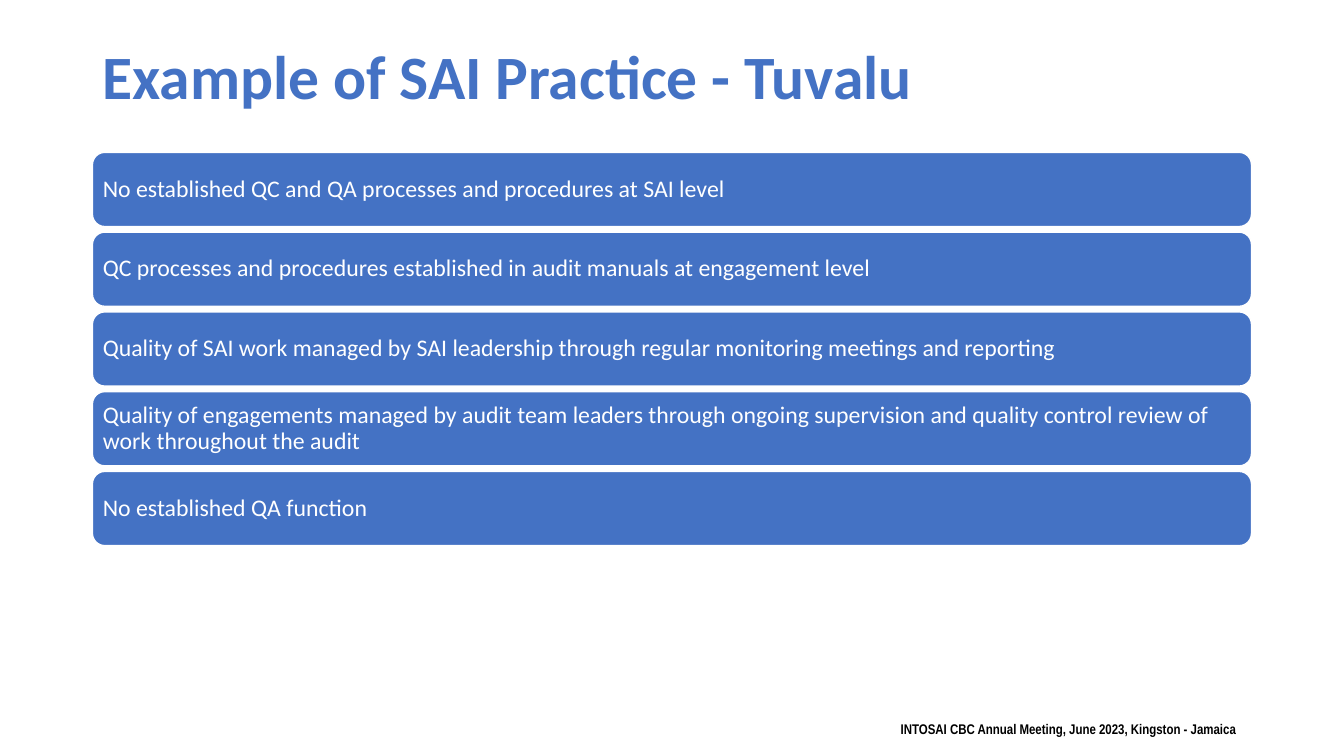
from dataclasses import dataclass

from pptx import Presentation
from pptx.dml.color import RGBColor
from pptx.enum.shapes import MSO_SHAPE
from pptx.enum.text import MSO_ANCHOR, MSO_AUTO_SIZE, PP_ALIGN
from pptx.util import Cm, Pt

ROUNDED = MSO_SHAPE.ROUNDED_RECTANGLE
MIDDLE, TOP = MSO_ANCHOR.MIDDLE, MSO_ANCHOR.TOP
LEFT = PP_ALIGN.LEFT
NO_AUTOFIT = MSO_AUTO_SIZE.NONE


@dataclass(frozen=True)
class Theme:
    blue: RGBColor = RGBColor(0x44, 0x72, 0xC4)
    white: RGBColor = RGBColor(0xFF, 0xFF, 0xFF)
    black: RGBColor = RGBColor(0, 0, 0)
    main_font: str = "Calibri"
    footer_font: str = "Arial Narrow"
    title_size: int = 44
    finding_size: int = 17
    footer_size: int = 10


THEME = Theme()


def write(shape, text, *, size, color, font=THEME.main_font, bold=False,
          anchor=MIDDLE, line_spacing=0.9, inset_x=0.25, inset_y=0.13):
    frame = shape.text_frame
    frame.text = text
    frame.word_wrap = True
    frame.auto_size = NO_AUTOFIT
    frame.vertical_anchor = anchor
    frame.margin_left = frame.margin_right = Cm(inset_x)
    frame.margin_top = frame.margin_bottom = Cm(inset_y)
    paragraph = frame.paragraphs[0]
    paragraph.alignment = LEFT
    paragraph.line_spacing = line_spacing
    run_font = paragraph.runs[0].font
    run_font.name = font
    run_font.size = Pt(size)
    run_font.bold = bold
    run_font.color.rgb = color


FINDINGS = [
    "No established QC and QA processes and procedures at SAI level",
    "QC processes and procedures established in audit manuals at engagement level",
    "Quality of SAI work managed by SAI leadership through regular monitoring "
    "meetings and reporting",
    "Quality of engagements managed by audit team leaders through ongoing "
    "supervision and quality control review of work throughout the audit",
    "No established QA function",
]
CONTENT_LEFT, CONTENT_WIDTH = Cm(2.33), Cm(29.21)
FINDING_TOP, FINDING_HEIGHT, FINDING_PITCH = 3.84, 1.87, 2.01

prs = Presentation()
prs.slide_width, prs.slide_height = Cm(33.87), Cm(19.05)
slide = prs.slides.add_slide(prs.slide_layouts[5])

title = slide.shapes.title
title.left, title.top = CONTENT_LEFT, Cm(1.02)
title.width, title.height = CONTENT_WIDTH, Cm(1.96)
write(title, "Example of SAI Practice - Tuvalu", size=THEME.title_size,
      color=THEME.blue, bold=True)

for row, finding in enumerate(FINDINGS):
    card = slide.shapes.add_shape(
        ROUNDED, CONTENT_LEFT, Cm(FINDING_TOP + row * FINDING_PITCH),
        CONTENT_WIDTH, Cm(FINDING_HEIGHT))
    card.shadow.inherit = False
    card.fill.solid()
    card.fill.fore_color.rgb = THEME.blue
    card.line.color.rgb = THEME.white
    card.line.width = Pt(1)
    write(card, finding, size=THEME.finding_size, color=THEME.white,
          inset_x=0.17, inset_y=0.17)

footer = slide.shapes.add_textbox(Cm(22.45), Cm(18.03), Cm(9.27), Cm(0.69))
write(footer, "INTOSAI CBC Annual Meeting, June 2023, Kingston - Jamaica",
      size=THEME.footer_size, color=THEME.black, font=THEME.footer_font,
      bold=True, anchor=TOP, line_spacing=1.0)

prs.save("out.pptx")
